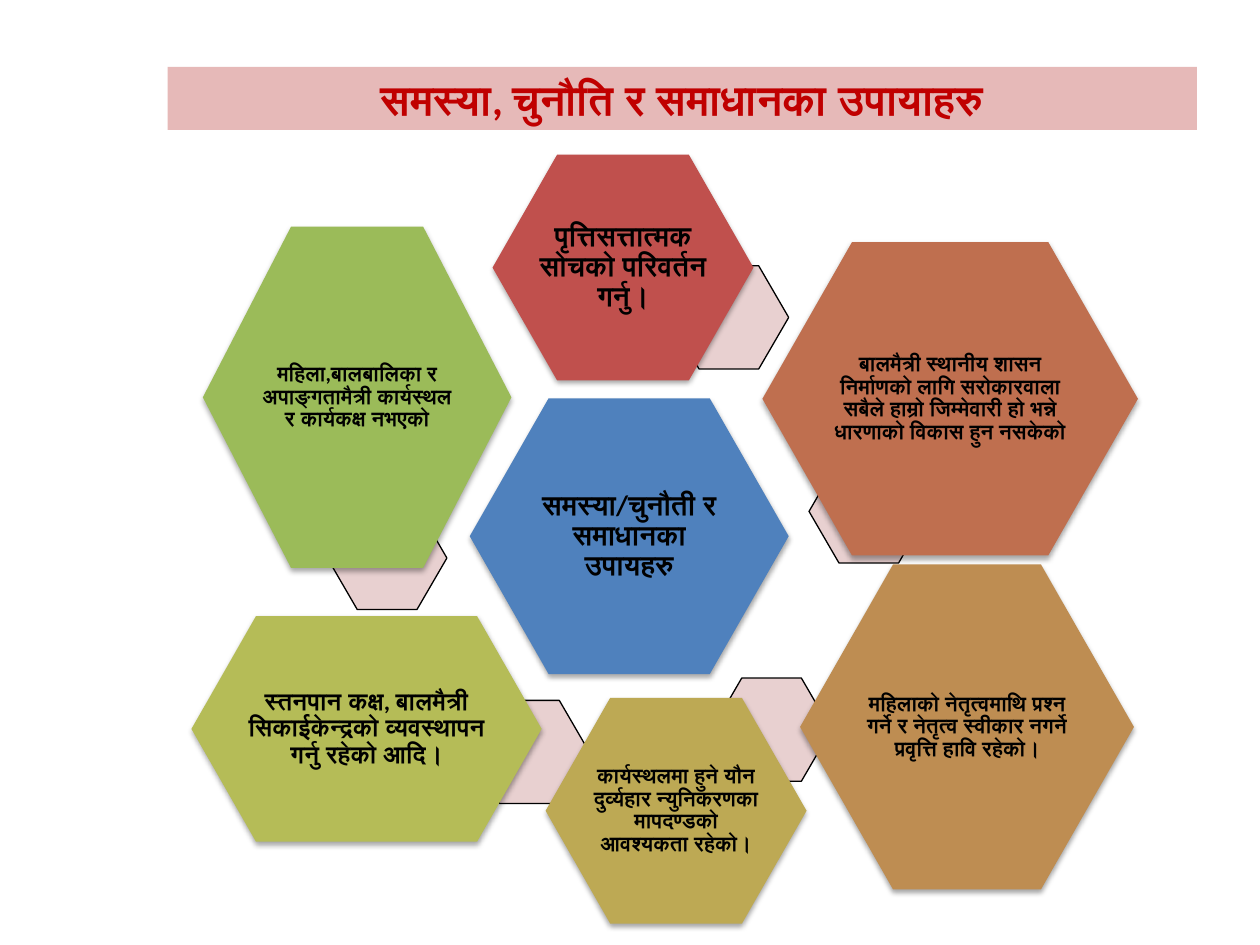
from dataclasses import dataclass

import pptx
import pptx.dml.color
import pptx.enum.shapes
import pptx.enum.text
import pptx.oxml
import pptx.oxml.ns
import pptx.util

Cm = pptx.util.Cm
Pt = pptx.util.Pt
RGBColor = pptx.dml.color.RGBColor
HEXAGON = pptx.enum.shapes.MSO_SHAPE.HEXAGON
ANCHOR = pptx.enum.text.MSO_ANCHOR
CENTER = pptx.enum.text.PP_ALIGN.CENTER

FONT = "Calibri"
BLACK = RGBColor(0x00, 0x00, 0x00)
TITLE_RED = RGBColor(0xC0, 0x00, 0x00)
TITLE_PINK = RGBColor(0xE6, 0xB9, 0xB8)
PALE_PINK = RGBColor(0xE8, 0xD0, 0xD0)
BLUE = RGBColor(0x4F, 0x81, 0xBD)
RED = RGBColor(0xC0, 0x50, 0x4D)
RUST = RGBColor(0xBF, 0x6F, 0x4F)
TAN = RGBColor(0xBE, 0x8D, 0x52)
GOLD = RGBColor(0xBD, 0xA9, 0x54)
OLIVE = RGBColor(0xB5, 0xBC, 0x57)
GREEN = RGBColor(0x9B, 0xBB, 0x59)


@dataclass
class Topic:
    """A labelled hexagon; lengths in centimetres, text size in points."""
    left: float
    top: float
    width: float
    height: float
    color: RGBColor
    size: int
    text: str


TITLE = "समस्या, चुनौति र समाधानका उपायाहरु"
TOPICS = [
    Topic(9.47, 8.03, 6.43, 5.56, BLUE, 16, "समस्या/चुनौती र समाधानका उपायहरु"),
    Topic(9.93, 3.12, 5.26, 4.55, RED, 16, "पृत्तिसत्तात्मक सोचको परिवर्तन गर्नु।"),
    Topic(15.37, 4.88, 7.57, 6.32, RUST, 12,
          "बालमैत्री स्थानीय शासन निर्माणको लागि सरोकारवाला सबैले हाम्रो "
          "जिम्मेवारी हो भन्ने धारणाको विकास हुन नसकेको"),
    Topic(16.13, 11.38, 6.73, 6.55, TAN, 12,
          "महिलाको नेतृत्वमाथि प्रश्न गर्ने र नेतृत्व स्वीकार नगर्ने प्रवृत्ति हावि रहेको।"),
    Topic(11, 14.07, 5.26, 4.55, GOLD, 12,
          "कार्यस्थलमा हुने यौन दुर्व्यहार न्युनिकरणका मापदण्डको आवश्यकता रहेको।"),
    Topic(3.86, 12.42, 7.06, 4.55, OLIVE, 14,
          "स्तनपान कक्ष, बालमैत्री सिकाईकेन्द्रको व्यवस्थापन गर्नु रहेको आदि।"),
    Topic(4.09, 4.57, 6.22, 6.88, GREEN, 12,
          "महिला,बालबालिका र अपाङ्गतामैत्री कार्यस्थल र कार्यकक्ष नभएको"),
]
ACCENT_SIZE = (2.41, 2.08)
ACCENT_CORNERS = [(13.49, 5.36), (16.31, 9.27), (14.35, 13.67), (9.47, 14.12), (6.6, 10.21)]


def add_hexagon(slide, left: float, top: float, width: float, height: float,
                color: RGBColor, slant: float):
    sp = slide.shapes.add_shape(HEXAGON, Cm(left), Cm(top), Cm(width), Cm(height))
    sp.adjustments[0] = slant
    sp.shadow.inherit = False
    sp.fill.solid()
    sp.fill.fore_color.rgb = color
    return sp


def add_shadow(sp) -> None:
    effects = sp._element.spPr.find(pptx.oxml.ns.qn("a:effectLst"))
    effects.append(pptx.oxml.parse_xml(
        f'<a:outerShdw {pptx.oxml.ns.nsdecls("a")} blurRad="{Pt(3.1)}" dist="{Pt(1.8)}" '
        'dir="5400000" rotWithShape="0">'
        '<a:srgbClr val="000000"><a:alpha val="35000"/></a:srgbClr></a:outerShdw>'))


def write(tf, text: str, size: int, color: RGBColor):
    tf.word_wrap = True
    p = tf.paragraphs[0]
    p.text = text
    p.alignment = CENTER
    p.font.name = FONT
    p.font.size = Pt(size)
    p.font.bold = True
    p.font.color.rgb = color
    return p


def add_accent(slide, left: float, top: float) -> None:
    sp = add_hexagon(slide, left, top, *ACCENT_SIZE, PALE_PINK, 0.29)
    sp.line.color.rgb = BLACK
    sp.line.width = Pt(0.75)


def add_topic(slide, topic: Topic) -> None:
    sp = add_hexagon(slide, topic.left, topic.top, topic.width, topic.height,
                     topic.color, 0.286)
    sp.line.fill.background()
    add_shadow(sp)
    tf = sp.text_frame
    tf.vertical_anchor = ANCHOR.MIDDLE
    tf.margin_left = tf.margin_right = tf.margin_top = tf.margin_bottom = Cm(0.05)
    p = write(tf, topic.text, topic.size, BLACK)
    p.line_spacing = 0.9
    p.space_after = Pt(0.35 * topic.size)


def format_title(sp) -> None:
    sp.left, sp.top, sp.width, sp.height = Cm(3.38), Cm(1.35), Cm(20.75), Cm(1.27)
    sp.fill.solid()
    sp.fill.fore_color.rgb = TITLE_PINK
    tf = sp.text_frame
    tf.auto_size = pptx.enum.text.MSO_AUTO_SIZE.NONE
    tf.vertical_anchor = ANCHOR.TOP
    write(tf, TITLE, 24, TITLE_RED)


def main() -> None:
    prs = pptx.Presentation()
    prs.slide_width, prs.slide_height = Cm(25.4), Cm(19.05)
    slide = prs.slides.add_slide(prs.slide_layouts[5])
    format_title(slide.shapes.title)
    for left, top in ACCENT_CORNERS:
        add_accent(slide, left, top)
    for topic in TOPICS:
        add_topic(slide, topic)
    prs.save("out.pptx")


if __name__ == "__main__":
    main()
